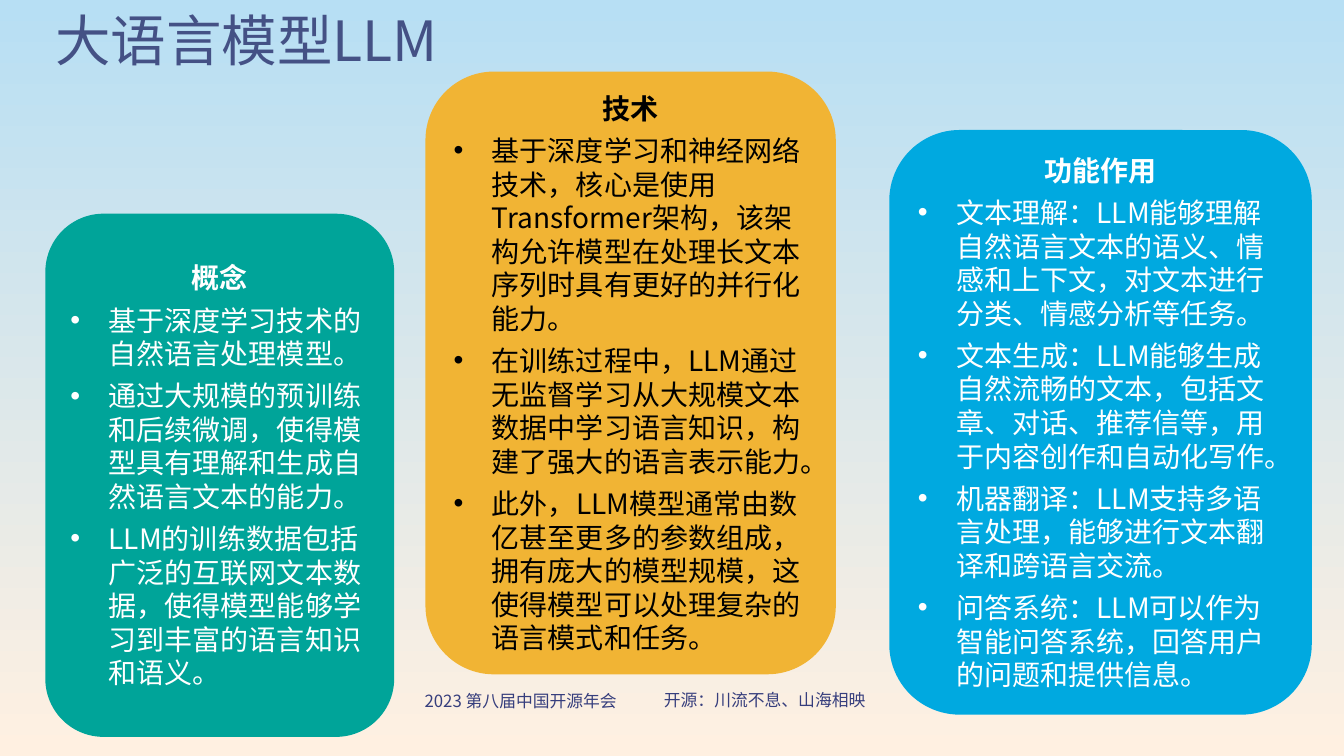
from dataclasses import dataclass

from lxml import etree
from pptx import Presentation
from pptx import util as u
from pptx.dml.color import RGBColor
from pptx.enum import shapes, text
from pptx.oxml.ns import qn


@dataclass(frozen=True)
class Theme:
    font: str = "Noto Sans CJK SC"
    sky: str = "B7DFF4"
    sand: str = "FFF0E1"
    blue: str = "00A9E0"
    amber: str = "F1B434"
    teal: str = "00A499"
    white: str = "FFFFFF"
    black: str = "000000"
    title: str = "445185"
    footer: str = "363E7D"
    title_size: float = 39.6
    card_size: float = 20
    footer_size: float = 12


@dataclass(frozen=True)
class Box:
    left: float
    top: float
    width: float
    height: float

    def lengths(self) -> tuple[u.Length, ...]:
        return tuple(u.Inches(v) for v in (self.left, self.top, self.width, self.height))


@dataclass(frozen=True)
class Card:
    box: Box
    fill: str
    color: str
    heading: str
    points: tuple[str, ...]


@dataclass(frozen=True)
class Footer:
    box: Box
    caption: str


T = Theme()
CARD_INSET = 0.08
BULLET_INDENT = 0.38

FOOTERS = (
    Footer(Box(3.79, 6.8, 2.75, 0.3), "2023 第八届中国开源年会"),
    Footer(Box(6.38, 6.79, 2.41, 0.3), "开源：川流不息、山海相映"),
)

CARDS = (
    Card(Box(8.82, 1.29, 4.19, 5.8), T.blue, T.white, "功能作用", (
        "文本理解：LLM能够理解自然语言文本的语义、情感和上下文，对文本进行分类、情感分析等任务。",
        "文本生成：LLM能够生成自然流畅的文本，包括文章、对话、推荐信等，用于内容创作和自动化写作。",
        "机器翻译：LLM支持多语言处理，能够进行文本翻译和跨语言交流。",
        "问答系统：LLM可以作为智能问答系统，回答用户的问题和提供信息。",
    )),
    Card(Box(4.22, 0.71, 4.07, 5.98), T.amber, T.black, "技术", (
        "基于深度学习和神经网络技术，核心是使用Transformer架构，该架构允许模型在处理长文本序列时具有更好的并行化能力。",
        "在训练过程中，LLM通过无监督学习从大规模文本数据中学习语言知识，构建了强大的语言表示能力。",
        "此外，LLM模型通常由数亿甚至更多的参数组成，拥有庞大的模型规模，这使得模型可以处理复杂的语言模式和任务。",
    )),
    Card(Box(0.45, 2.12, 3.46, 5.19), T.teal, T.white, "概念", (
        "基于深度学习技术的自然语言处理模型。",
        "通过大规模的预训练和后续微调，使得模型具有理解和生成自然语言文本的能力。",
        "LLM的训练数据包括广泛的互联网文本数据，使得模型能够学习到丰富的语言知识和语义。",
    )),
)


def style(p, size: float, color: str, bold: bool = False) -> None:
    """Format every run, using the theme font for Latin and East Asian text."""
    for r in p.runs:
        r.font.name = T.font
        r.font.size = u.Pt(size)
        r.font.bold = bold
        r.font.color.rgb = RGBColor.from_string(color)
        latin = r.font._element.find(qn("a:latin"))
        ea = etree.Element(qn("a:ea"), typeface=T.font)
        latin.addnext(ea)


def add_bullet(p) -> None:
    pPr = p._p.get_or_add_pPr()
    indent = u.Inches(BULLET_INDENT)
    pPr.set("marL", str(indent))
    pPr.set("indent", str(-indent))
    etree.SubElement(pPr, qn("a:buFont"), typeface="Arial")
    etree.SubElement(pPr, qn("a:buChar"), char="•")


def paint_background(s) -> None:
    fill = s.background.fill
    fill.gradient()
    fill.gradient_angle = 270
    for stop, position, color in zip(fill.gradient_stops, (0, 1), (T.sky, T.sand)):
        stop.position = position
        stop.color.rgb = RGBColor.from_string(color)


def add_card(s, card: Card) -> None:
    sp = s.shapes.add_shape(shapes.MSO_SHAPE.ROUNDED_RECTANGLE, *card.box.lengths())
    sp.shadow.inherit = False
    sp.fill.solid()
    sp.fill.fore_color.rgb = RGBColor.from_string(card.fill)
    sp.line.fill.background()
    tf = sp.text_frame
    tf.word_wrap = True
    tf.vertical_anchor = text.MSO_ANCHOR.MIDDLE
    tf.margin_left = tf.margin_right = u.Inches(CARD_INSET)
    tf.margin_top = tf.margin_bottom = u.Inches(CARD_INSET)
    tf.text = "\n".join((card.heading, *card.points))
    for i, p in enumerate(tf.paragraphs):
        is_heading = i == 0
        p.alignment = text.PP_ALIGN.CENTER if is_heading else text.PP_ALIGN.LEFT
        p.space_after = u.Pt(6)
        if not is_heading:
            add_bullet(p)
        style(p, T.card_size, card.color, bold=is_heading)


def add_label(s, box: Box, caption: str, size: float, color: str):
    """Add a one-paragraph text box and return its text frame."""
    tf = s.shapes.add_textbox(*box.lengths()).text_frame
    tf.word_wrap = True
    tf.text = caption
    style(tf.paragraphs[0], size, color)
    return tf


def add_footer(s, footer: Footer) -> None:
    tf = add_label(s, footer.box, footer.caption, T.footer_size, T.footer)
    tf.auto_size = text.MSO_AUTO_SIZE.SHAPE_TO_FIT_TEXT
    tf.paragraphs[0].alignment = text.PP_ALIGN.CENTER


def add_title(s) -> None:
    tf = add_label(s, Box(0.45, 0.18, 12.07, 0.5), "大语言模型LLM", T.title_size, T.title)
    tf.vertical_anchor = text.MSO_ANCHOR.MIDDLE
    tf.paragraphs[0].line_spacing = 0.9


def main() -> None:
    prs = Presentation()
    prs.slide_width, prs.slide_height = u.Inches(13.33), u.Inches(7.5)
    s = prs.slides.add_slide(prs.slide_layouts[6])
    paint_background(s)
    for footer in FOOTERS:
        add_footer(s, footer)
    for card in CARDS:
        add_card(s, card)
    add_title(s)
    prs.save("out.pptx")


if __name__ == "__main__":
    main()
